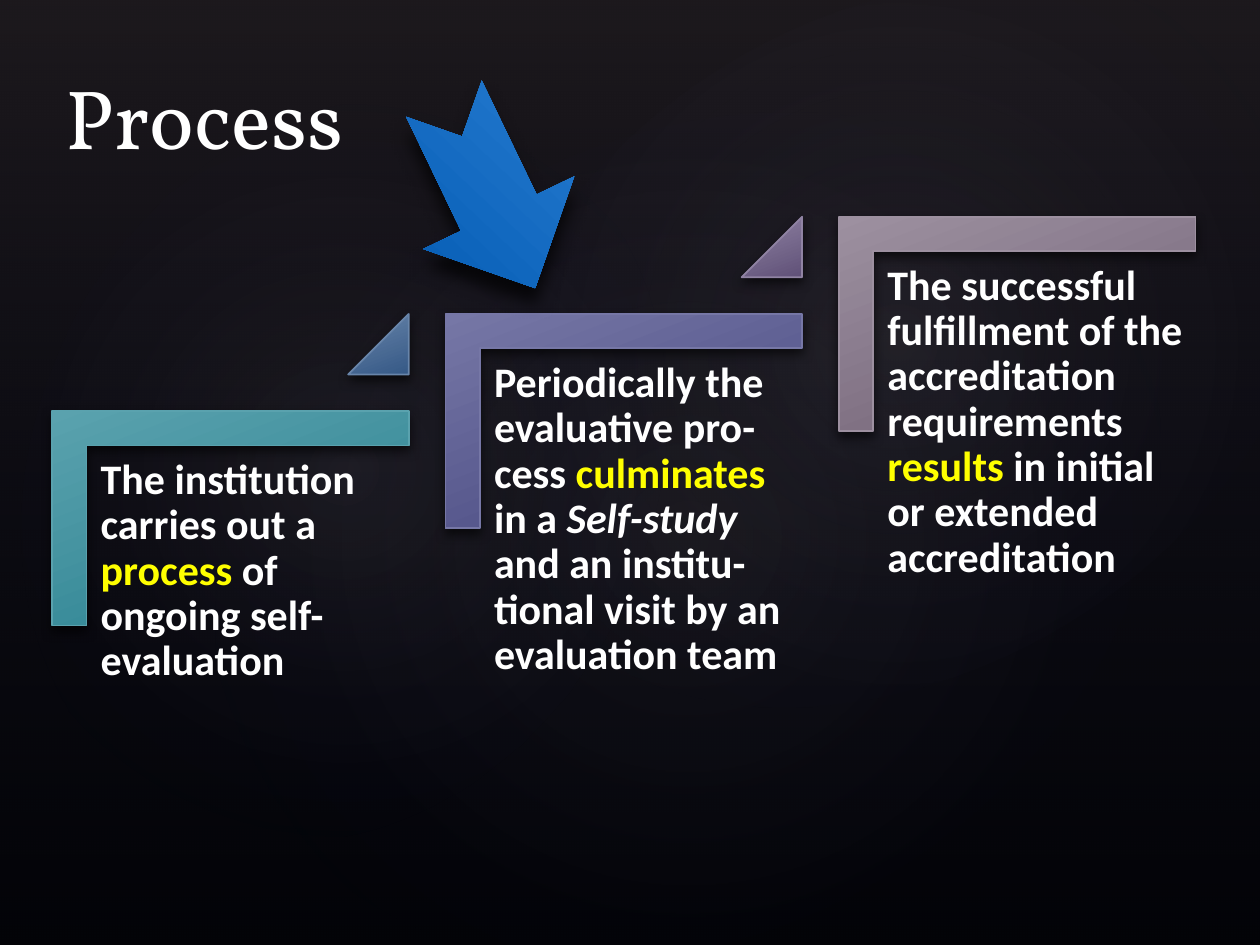
from pptx import Presentation
from pptx.dml.color import RGBColor
from pptx.enum.shapes import MSO_SHAPE
from pptx.enum.text import MSO_ANCHOR
from pptx.oxml import parse_xml
from pptx.oxml.ns import nsdecls
from pptx.util import Cm, Pt

COLORS = {
    "black": "000000", "white": "FFFFFF", "yellow": "FFFF00",
    "navy": "242852", "plum": "504652", "glow": "C4BCC6",
    "teal": "5AA2AE", "teal dark": "277F8E",
    "steel": "6885AA", "steel dark": "365986",
    "indigo": "7677A6", "indigo dark": "44457E",
    "violet": "9083A3", "violet dark": "605178",
    "mauve": "9D90A0", "mauve dark": "6E5E72",
    "blue": "297FD5", "blue dark": "0057AE",
}
SLIDE_WIDTH, SLIDE_HEIGHT = 25.4, 19.05

# Glows: left, top, width, height, rotation, opacity
GLOWS = [
    (3.81, 2.9, 20.12, 15.85, 328.7, 7),
    (-0.76, 3.25, 15.39, 12.45, 294.3, 8),
    (9.09, 0.33, 18.01, 13.21, 328.7, 8),
]

# Steps: bracket colour, colour of the triangle that follows, text runs
STEPS = [
    ("teal", "steel", [
        ("The institution carries out a ", {}),
        ("process", {"color": "yellow"}),
        (" of ongoing self-evaluation", {})]),
    ("indigo", "violet", [
        ("Periodically the evaluative pro-cess ", {}),
        ("culminates", {"color": "yellow"}),
        (" in a ", {}),
        ("Self-study", {"italic": True}),
        (" and an institu-tional visit by an evaluation team", {})]),
    ("mauve", None, [
        ("The successful fulfillment of the accreditation requirements ", {}),
        ("results", {"color": "yellow"}),
        (" in initial or extended accreditation", {})]),
]
FIRST_LEFT, FIRST_TOP = 1.05, 8.29
STEP_RIGHT, STEP_UP = 7.93, 1.96
BRACKET_WIDTH, BRACKET_HEIGHT = 7.19, 4.32
TRIANGLE_SIZE = 1.22


def color(name):
    return RGBColor.from_string(COLORS[name])


def set_gradient(shape, stops, angle=None, rotates=True):
    """Fill with (position, colour, opacity) stops; circular without an angle."""
    stop_xml = "".join(
        f'<a:gs pos="{position * 1000}"><a:srgbClr val="{COLORS[name]}">'
        f'<a:alpha val="{opacity * 1000}"/></a:srgbClr></a:gs>'
        for position, name, opacity in stops)
    if angle is None:
        direction = ('<a:path path="circle"><a:fillToRect l="50000" t="50000" '
                     'r="50000" b="50000"/></a:path>')
    else:
        direction = f'<a:lin ang="{angle * 60000}" scaled="0"/>'
    gradient = parse_xml(
        f'<a:gradFill {nsdecls("a")} rotWithShape="{int(rotates)}">'
        f'<a:gsLst>{stop_xml}</a:gsLst>{direction}</a:gradFill>')
    shape.fill.background()
    properties = shape._element.spPr
    properties.replace(properties.find(
        "{http://schemas.openxmlformats.org/drawingml/2006/main}noFill"), gradient)


def add_shape(slide, kind, left, top, width, height, rotation=0, line=None):
    shape = slide.shapes.add_shape(kind, Cm(left), Cm(top), Cm(width), Cm(height))
    shape.rotation = rotation
    shape.shadow.inherit = False
    if line:
        shape.line.color.rgb = color(line)
        shape.line.width = Pt(1)
    else:
        shape.line.fill.background()
    return shape


def add_shadow(shape, opacity, blur, distance):
    effects = shape._element.spPr[-1]
    effects.append(parse_xml(
        f'<a:outerShdw {nsdecls("a")} blurRad="{Pt(blur)}" dist="{Pt(distance)}" '
        f'dir="5400000" rotWithShape="0"><a:srgbClr val="{COLORS["black"]}">'
        f'<a:alpha val="{opacity * 1000}"/></a:srgbClr></a:outerShdw>'))


def shade(shape, name, rotates=True):
    set_gradient(shape, [(0, name, 100), (100, f"{name} dark", 100)], 69, rotates)


def add_text(slide, runs, left, top, width, height, *, font, size, bold=False,
             anchor=MSO_ANCHOR.TOP, inset=0.25, line_spacing=1.0):
    box = slide.shapes.add_textbox(Cm(left), Cm(top), Cm(width), Cm(height))
    frame = box.text_frame
    frame.word_wrap = True
    frame.vertical_anchor = anchor
    frame.margin_left = frame.margin_right = Cm(inset)
    frame.margin_top = frame.margin_bottom = Cm(min(inset, 0.25))
    paragraph = frame.paragraphs[0]
    paragraph.line_spacing = line_spacing
    for text, style in runs:
        run = paragraph.add_run()
        run.text = text
        run.font.name = font
        run.font.size = Pt(size)
        run.font.bold = bold
        run.font.italic = style.get("italic", False)
        run.font.color.rgb = color(style.get("color", "white"))


def add_background(slide):
    slide.background.fill.solid()
    slide.background.fill.fore_color.rgb = color("black")
    veil = add_shape(slide, MSO_SHAPE.RECTANGLE, 0, 0, SLIDE_WIDTH, SLIDE_HEIGHT)
    set_gradient(veil, [(0, "plum", 36), (100, "navy", 10)], 90)
    for left, top, width, height, rotation, opacity in GLOWS:
        glow = add_shape(slide, MSO_SHAPE.OVAL, left, top, width, height, rotation)
        set_gradient(glow, [(0, "glow", opacity), (58, "navy", 0)])


def add_step(slide, index, bracket_color, triangle_color, runs):
    left = FIRST_LEFT + index * STEP_RIGHT
    top = FIRST_TOP - index * STEP_UP

    # The bracket is a corner turned by 90 degrees about its centre
    turn = (BRACKET_WIDTH - BRACKET_HEIGHT) / 2
    bracket = add_shape(slide, MSO_SHAPE.CORNER, left + turn, top - turn,
                        BRACKET_HEIGHT, BRACKET_WIDTH, 90, bracket_color)
    bracket.adjustments[0] = bracket.adjustments[1] = 0.16
    shade(bracket, bracket_color, rotates=False)
    add_shadow(bracket, 60, 6, 3)

    add_text(slide, runs, left + 0.73, top + 0.7, 6.48, 5.69, font="Calibri",
             size=24, bold=True, line_spacing=0.9)

    # The triangle ends at the bracket's right edge, level with the next step
    if triangle_color:
        triangle = add_shape(slide, MSO_SHAPE.ISOSCELES_TRIANGLE,
                             left + BRACKET_WIDTH - TRIANGLE_SIZE, top - STEP_UP,
                             TRIANGLE_SIZE, TRIANGLE_SIZE, line=triangle_color)
        triangle.adjustments[0] = 1
        shade(triangle, triangle_color)
        add_shadow(triangle, 60, 6, 3)


def main():
    presentation = Presentation()
    presentation.slide_width = Cm(SLIDE_WIDTH)
    presentation.slide_height = Cm(SLIDE_HEIGHT)
    slide = presentation.slides.add_slide(presentation.slide_layouts[6])
    add_background(slide)

    # Rising steps
    for index, step in enumerate(STEPS):
        add_step(slide, index, *step)

    # Title
    add_text(slide, [("Process", {})], 1.07, 1.07, 23.06, 2.54, font="Vollkorn",
             size=48, anchor=MSO_ANCHOR.BOTTOM)

    # Arrow to the middle step
    arrow = add_shape(slide, MSO_SHAPE.NOTCHED_RIGHT_ARROW, 7.75, 2.21, 4.24, 3.38, 64.3)
    shade(arrow, "blue")
    add_shadow(arrow, 70, 9, 9)

    presentation.save("out.pptx")


if __name__ == "__main__":
    main()
